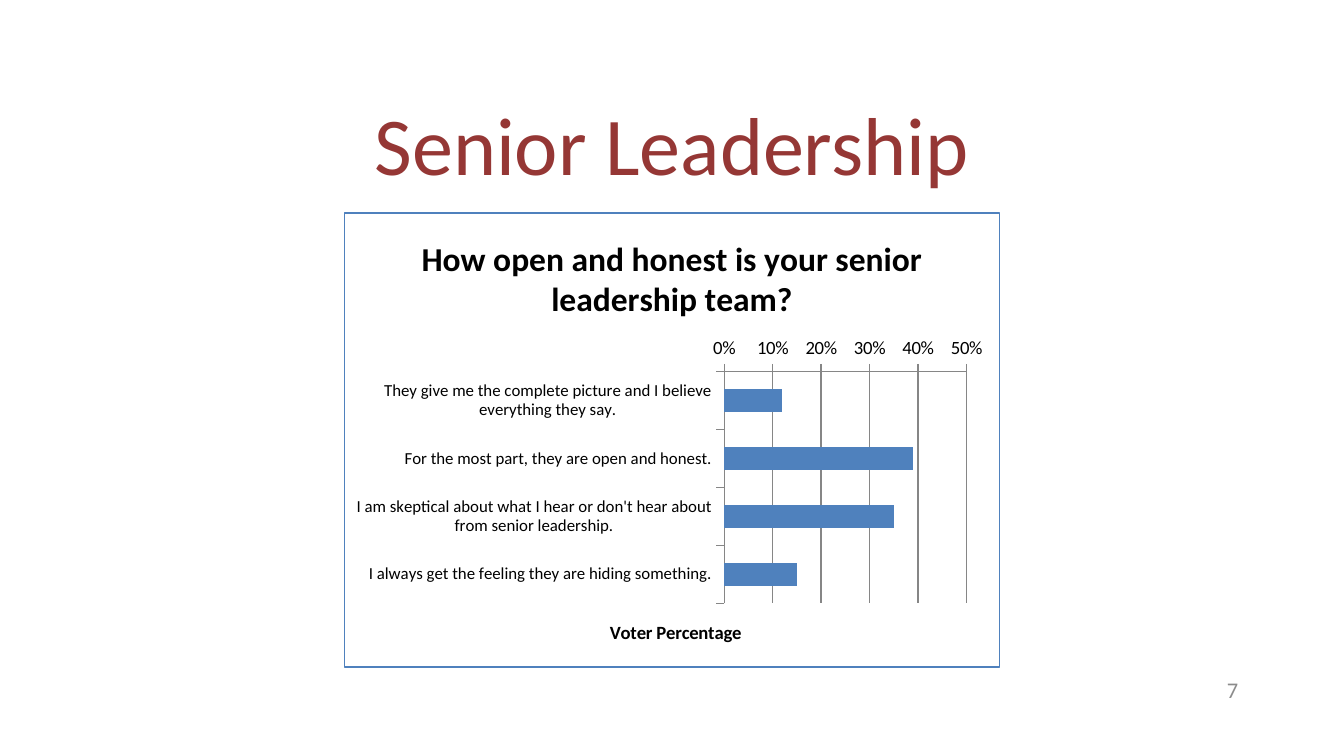
"""Build the senior leadership survey slide."""
import pptx
import pptx.chart.data
import pptx.dml.color
import pptx.enum.chart
import pptx.enum.text
import pptx.oxml
import pptx.oxml.ns
import pptx.util
from pptx.util import Cm, Pt

FONT = "Calibri"
ANSWERS = {
    "They give me the complete picture and I believe everything they say.": 0.12,
    "For the most part, they are open and honest.": 0.39,
    "I am skeptical about what I hear or don't hear about from senior leadership.": 0.35,
    "I always get the feeling they are hiding something.": 0.15,
}


def rgb(value):
    """Return the colour for a hex string."""
    return pptx.dml.color.RGBColor.from_string(value)


def style_font(font, size, color, bold=False):
    """Set the typeface, size, colour and weight of a font."""
    font.name, font.size, font.bold = FONT, Pt(size), bold
    font.color.rgb = rgb(color)


def write_text(text_frame, text, size, color, alignment=None, bold=False):
    """Write one styled run in the first paragraph and return the paragraph."""
    paragraph = text_frame.paragraphs[0]
    paragraph.alignment = alignment
    run = paragraph.add_run()
    run.text = text
    style_font(run.font, size, color, bold)
    return paragraph


def place(shape, left, top, width, height):
    """Move and size a shape, in centimetres."""
    shape.left, shape.top = Cm(left), Cm(top)
    shape.width, shape.height = Cm(width), Cm(height)


def set_layout(parent, index, target=None, **fractions):
    """Give a chart part a manual layout in fractions of the chart."""
    for layout in parent.findall(pptx.oxml.ns.qn("c:layout")):
        parent.remove(layout)
    settings = f'<c:layoutTarget val="{target}"/>' if target else ""
    settings += '<c:xMode val="edge"/><c:yMode val="edge"/>'
    settings += "".join(f'<c:{key} val="{value}"/>' for key, value in fractions.items())
    parent.insert(index, pptx.oxml.parse_xml(
        f'<c:layout {pptx.oxml.ns.nsdecls("c")}>'
        f"<c:manualLayout>{settings}</c:manualLayout></c:layout>"))


def add_border(chart, color, width):
    """Outline the chart area on a white fill."""
    chart_element = chart.element.find(pptx.oxml.ns.qn("c:chart"))
    chart_element.addnext(pptx.oxml.parse_xml(
        f'<c:spPr {pptx.oxml.ns.nsdecls("c", "a")}>'
        '<a:solidFill><a:srgbClr val="FFFFFF"/></a:solidFill>'
        f'<a:ln w="{Pt(width)}"><a:solidFill><a:srgbClr val="{color}"/>'
        "</a:solidFill></a:ln></c:spPr>"))


def style_axis(axis, size):
    """Set tick marks, label font and line of an axis."""
    axis.major_tick_mark = pptx.enum.chart.XL_TICK_MARK.OUTSIDE
    axis.minor_tick_mark = pptx.enum.chart.XL_TICK_MARK.NONE
    style_font(axis.tick_labels.font, size, "000000")
    axis.format.line.color.rgb = rgb("868686")
    axis.format.line.width = Pt(0.75)


def add_survey_chart(slide):
    """Add the bar chart of survey answers."""
    data = pptx.chart.data.CategoryChartData(number_format="0%")
    data.categories = list(ANSWERS)
    data.add_series("Series 1", list(ANSWERS.values()))
    chart = slide.shapes.add_chart(
        pptx.enum.chart.XL_CHART_TYPE.BAR_CLUSTERED,
        Cm(6.5), Cm(4.01), Cm(12.4), Cm(8.61), data).chart
    add_border(chart, "4F81BD", 0.75)
    style_font(chart.font, 10, "000000")
    chart.has_legend = False
    chart.has_title = True
    write_text(chart.chart_title.text_frame,
               "How open and honest is your senior leadership team?",
               18, "000000", bold=True)
    chart.chart_title.include_in_layout = False

    plot = chart.plots[0]
    plot.gap_width = 150
    plot.vary_by_categories = False
    bars = plot.series[0]
    bars.format.fill.solid()
    bars.format.fill.fore_color.rgb = rgb("4F81BD")

    style_axis(chart.category_axis, 9)
    chart.category_axis.reverse_order = True
    axis = chart.value_axis
    style_axis(axis, 10)
    axis.minimum_scale, axis.maximum_scale, axis.major_unit = 0, 0.5, 0.1
    axis.tick_labels.number_format = "0%"
    axis.tick_labels.number_format_is_linked = False
    axis.has_major_gridlines = True
    axis.major_gridlines.format.line.color.rgb = rgb("868686")
    axis.major_gridlines.format.line.width = Pt(0.75)
    axis.has_title = True
    write_text(axis.axis_title.text_frame, "Voter Percentage", 10, "000000", bold=True)

    plot_area = chart.element.find(".//" + pptx.oxml.ns.qn("c:plotArea"))
    set_layout(plot_area, 0, "inner", x=0.58, y=0.35, w=0.37, h=0.51)
    axis_title = plot_area.find(".//" + pptx.oxml.ns.qn("c:title"))
    set_layout(axis_title, 1, x=0.4, y=0.89)


def add_title(slide, text):
    """Fill and place the title placeholder."""
    title = slide.shapes.title
    place(title, 1.75, 1.42, 21.9, 2.77)
    title.text_frame.vertical_anchor = pptx.enum.text.MSO_ANCHOR.MIDDLE
    paragraph = write_text(title.text_frame, text, 44, "953735",
                           pptx.enum.text.PP_ALIGN.CENTER)
    paragraph.line_spacing = 0.9


def add_page_number(slide, text):
    """Add the page number at the lower right."""
    box = slide.shapes.add_textbox(Cm(17.93), Cm(12.65), Cm(5.72), Cm(0.76))
    box.text_frame.word_wrap = True
    box.text_frame.vertical_anchor = pptx.enum.text.MSO_ANCHOR.MIDDLE
    write_text(box.text_frame, text, 12, "8C8C8C", pptx.enum.text.PP_ALIGN.RIGHT)


def main():
    """Create the presentation and save it."""
    presentation = pptx.Presentation()
    presentation.slide_width, presentation.slide_height = Cm(25.4), Cm(14.29)
    slide = presentation.slides.add_slide(presentation.slide_layouts[5])
    add_title(slide, "Senior Leadership")
    add_survey_chart(slide)
    add_page_number(slide, "7")
    presentation.save("out.pptx")


if __name__ == "__main__":
    main()
